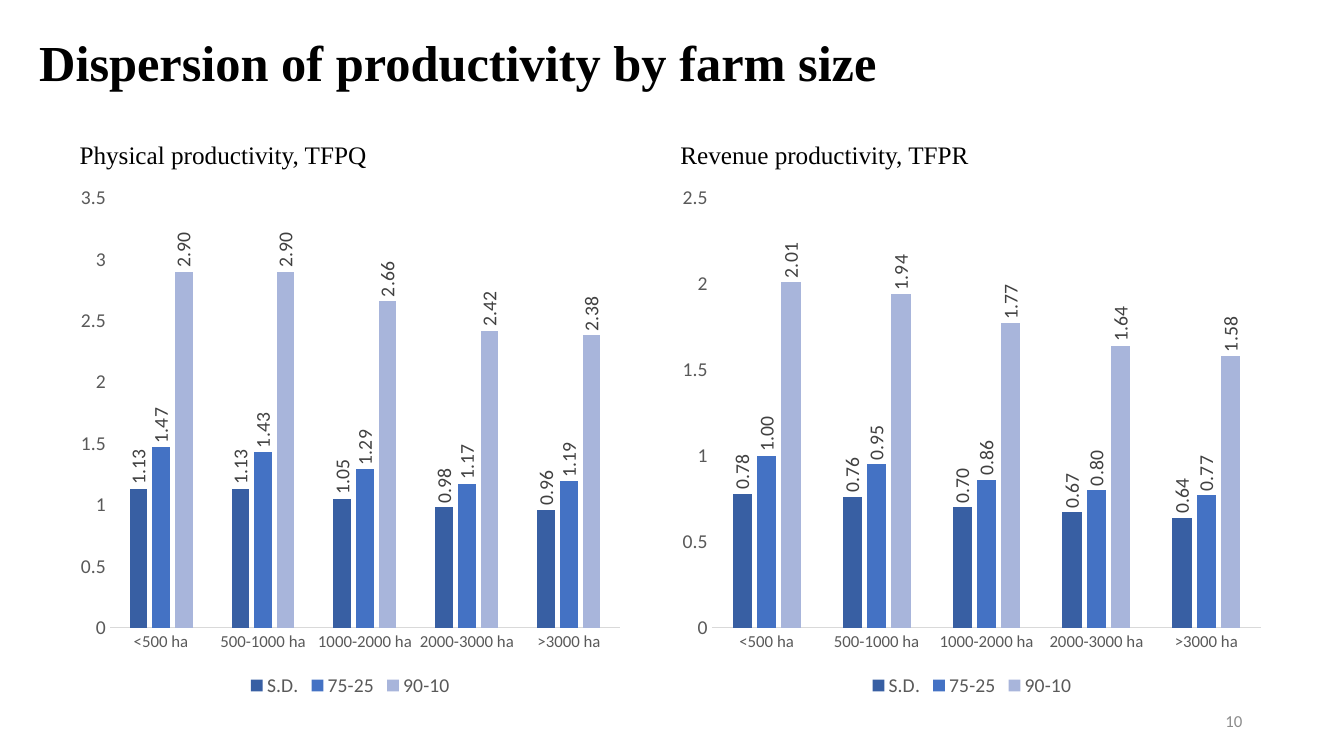
from pptx import Presentation
from pptx import util as u
from pptx.chart.data import CategoryChartData
from pptx.dml.color import RGBColor
from pptx.enum import chart as ch, text as tx

BLACK = RGBColor(0x00, 0x00, 0x00)
DARK = RGBColor(0x40, 0x40, 0x40)
GREY = RGBColor(0x59, 0x59, 0x59)
PALE = RGBColor(0x8C, 0x8C, 0x8C)
RULE = RGBColor(0xD9, 0xD9, 0xD9)
BLUES = [RGBColor(0x38, 0x5F, 0xA3), RGBColor(0x44, 0x72, 0xC4),
         RGBColor(0xA8, 0xB5, 0xDB)]
SERIF, SANS = "Times New Roman", "Calibri"

SIZES = ["<500 ha", "500-1000 ha", "1000-2000 ha", "2000-3000 ha", ">3000 ha"]
NAMES = ["S.D.", "75-25", "90-10"]
TFPQ = [[1.13, 1.13, 1.05, 0.98, 0.96],
        [1.47, 1.43, 1.29, 1.17, 1.19],
        [2.90, 2.90, 2.66, 2.42, 2.38]]
TFPR = [[0.78, 0.76, 0.70, 0.67, 0.64],
        [1.00, 0.95, 0.86, 0.80, 0.77],
        [2.01, 1.94, 1.77, 1.64, 1.58]]


def style(font, size, color, name=SANS, bold=False):
    """Set the look of a font."""
    font.size, font.name, font.bold = u.Pt(size), name, bold
    font.color.rgb = color


def write(slide, box, words, size, color, name, bold=False,
          anchor=tx.MSO_ANCHOR.TOP, align=tx.PP_ALIGN.LEFT, space=1.0):
    """Write one line of text in a box."""
    frame = slide.shapes.add_textbox(*map(u.Inches, box)).text_frame
    frame.word_wrap = True
    frame.vertical_anchor = anchor
    para = frame.paragraphs[0]
    para.alignment, para.line_spacing = align, space
    run = para.add_run()
    run.text = words
    style(run.font, size, color, name, bold)


def bars(slide, box, rows, top):
    """Draw a clustered column chart in a box."""
    data = CategoryChartData()
    data.categories = SIZES
    for name, row in zip(NAMES, rows):
        data.add_series(name, row)
    chart = slide.shapes.add_chart(
        ch.XL_CHART_TYPE.COLUMN_CLUSTERED, *map(u.Inches, box), data).chart
    style(chart.font, 12, BLACK)
    chart.has_title = False
    chart.has_legend = True
    chart.legend.position = ch.XL_LEGEND_POSITION.BOTTOM
    chart.legend.include_in_layout = False
    style(chart.legend.font, 14, GREY)

    cat, val = chart.category_axis, chart.value_axis
    for axis, size in ((cat, 12), (val, 14)):
        axis.major_tick_mark = axis.minor_tick_mark = ch.XL_TICK_MARK.NONE
        axis.has_major_gridlines = False
        style(axis.tick_labels.font, size, GREY)
    cat.format.line.color.rgb = RULE
    cat.format.line.width = u.Pt(0.75)
    val.format.line.fill.background()
    val.minimum_scale, val.maximum_scale, val.major_unit = 0, top, 0.5

    plot = chart.plots[0]
    plot.gap_width, plot.overlap, plot.vary_by_categories = 219, -27, False
    for series, color in zip(plot.series, BLUES):
        series.format.fill.solid()
        series.format.fill.fore_color.rgb = color
        tags = series.data_labels
        tags.show_value = True
        tags.position = ch.XL_LABEL_POSITION.OUTSIDE_END
        tags.number_format = "#,##0.00"
        tags.number_format_is_linked = False
        style(tags.font, 14, DARK)
    for part, turn in (("dLbls", "-5400000"), ("catAx", "-60000000")):
        for body in chart.element.xpath(f".//c:{part}/c:txPr/a:bodyPr"):
            body.set("rot", turn)
            body.set("vert", "horz")


def panel(slide, box, head, rows, top):
    """Place a heading with its chart below in a box."""
    left, upper, wide, high = box
    bars(slide, (left, upper + 0.41, wide, high - 0.41), rows, top)
    write(slide, (left, upper, 3.69, 0.4), head, 18, BLACK, SERIF)


def build(deck):
    """Build the slide on farm productivity."""
    slide = deck.slides.add_slide(deck.slide_layouts[6])
    mid = tx.MSO_ANCHOR.MIDDLE
    write(slide, (9.42, 6.95, 3, 0.4), "10", 12, PALE, SANS,
          anchor=mid, align=tx.PP_ALIGN.RIGHT)
    write(slide, (0.29, 0.3, 12.74, 0.69),
          "Dispersion of productivity by farm size", 36, BLACK, SERIF,
          bold=True, anchor=mid, space=0.9)
    panel(slide, (0.69, 1.33, 5.57, 5.63),
          "Physical productivity, TFPQ", TFPQ, 3.5)
    panel(slide, (6.65, 1.33, 5.98, 5.63),
          "Revenue productivity, TFPR", TFPR, 2.5)


def main():
    """Make and save the deck."""
    deck = Presentation()
    deck.slide_width, deck.slide_height = u.Inches(13.33), u.Inches(7.5)
    build(deck)
    deck.save("out.pptx")


if __name__ == "__main__":
    main()
